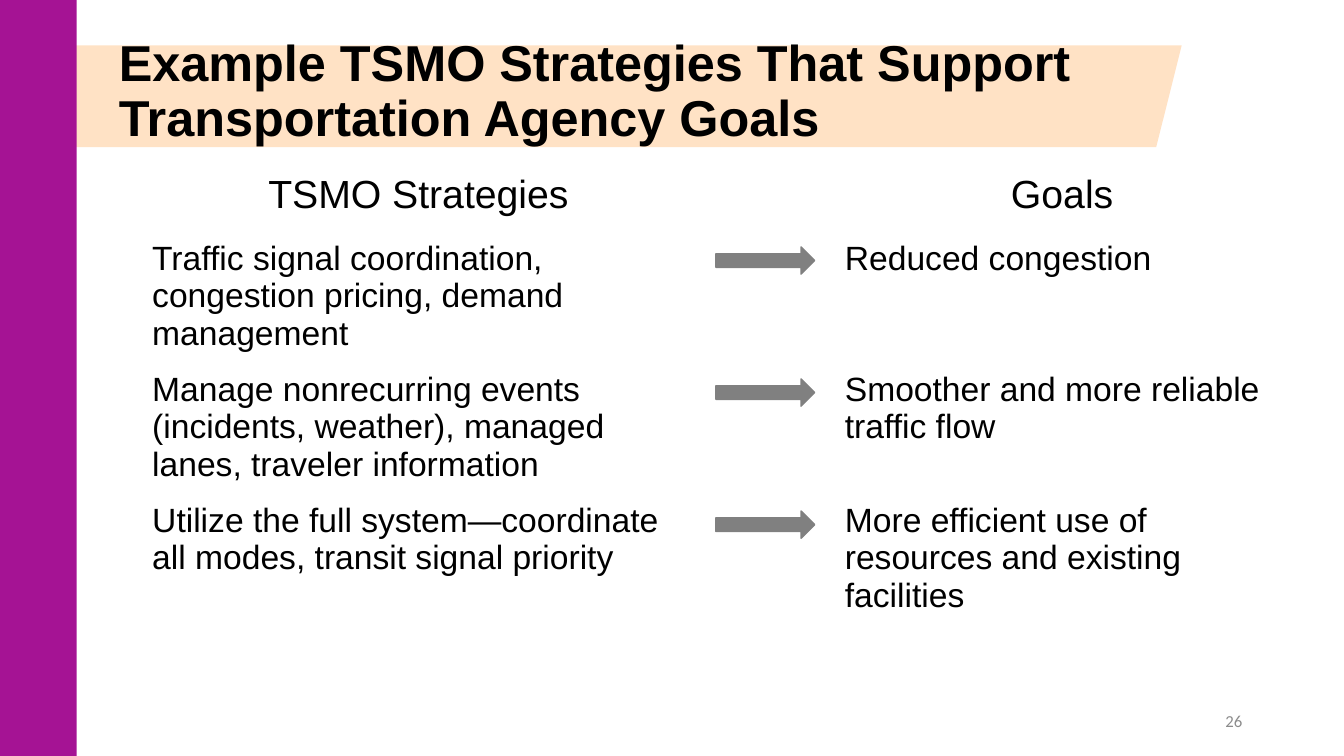
from dataclasses import dataclass

from pptx import Presentation
from pptx.dml.color import RGBColor
from pptx.enum.shapes import MSO_SHAPE
from pptx.enum.text import MSO_ANCHOR, PP_ALIGN
from pptx.util import Emu, Pt

SCALE = 9144  # EMU per px, 100 px to the inch


def px(n):
    return Emu(n * SCALE)


@dataclass(frozen=True)
class Theme:
    ink: str = "000000"
    bar: str = "A51394"
    band: str = "FFE2C5"
    arrow: str = "808080"
    muted: str = "8C8C8C"
    font: str = "Arial"
    small: str = "Calibri"
    title: int = 36
    head: int = 28
    body: int = 24
    note: int = 12


class Deck:
    def __init__(self, theme):
        self.theme = theme
        self.file = Presentation()
        self.file.slide_width, self.file.slide_height = px(1333), px(750)
        self.slide = self.file.slides.add_slide(self.file.slide_layouts[6])

    def shape(self, kind, box, color, line=False):
        item = self.slide.shapes.add_shape(kind, *map(px, box))
        item.shadow.inherit = False
        item.fill.solid()
        item.fill.fore_color.rgb = RGBColor.from_string(color)
        if line:
            item.line.color.rgb = RGBColor.from_string(color)
            item.line.width = Pt(1)
        else:
            item.line.fill.background()

    def add_run(self, para, text, size, color=None, font=None, bold=False):
        run = para.add_run()
        run.text = text
        run.font.name = font or self.theme.font
        run.font.size = Pt(size)
        run.font.bold = bold
        run.font.color.rgb = RGBColor.from_string(color or self.theme.ink)

    def text(self, box, text, size, anchor=MSO_ANCHOR.TOP,
             align=PP_ALIGN.LEFT, space=1.0, **style):
        frame = self.slide.shapes.add_textbox(*map(px, box)).text_frame
        frame.word_wrap = True
        frame.vertical_anchor = anchor
        para = frame.paragraphs[0]
        para.alignment = align
        para.line_spacing = space
        self.add_run(para, text, size, **style)

    def table(self, box, wide, high, rows):
        grid = self.slide.shapes.add_table(
            len(high), len(wide), *map(px, box)).table
        grid.first_row = grid.horz_banding = False
        for col, size in zip(grid.columns, wide):
            col.width = px(size)
        for row, size in zip(grid.rows, high):
            row.height = px(size)
        for r, row in enumerate(rows):
            for c, text in enumerate(row):
                cell = grid.cell(r, c)
                cell.fill.background()
                if not text:
                    continue
                para = cell.text_frame.paragraphs[0]
                if r == 0:
                    cell.vertical_anchor = MSO_ANCHOR.MIDDLE
                    para.alignment = PP_ALIGN.CENTER
                self.add_run(para, text,
                             self.theme.body if r else self.theme.head)


def main():
    theme = Theme()
    deck = Deck(theme)

    # Title band and side bar
    deck.shape(MSO_SHAPE.PARALLELOGRAM, (24, 45, 1148, 101), theme.band)
    deck.shape(MSO_SHAPE.RECTANGLE, (0, 0, 76, 750), theme.bar)
    deck.text((108, 33, 984, 103),
              "Example TSMO Strategies That Support "
              "Transportation Agency Goals",
              theme.title, space=0.9, bold=True)

    # Strategies and the goals they serve
    pairs = [
        ("TSMO Strategies", "Goals"),
        ("Traffic signal coordination, congestion pricing, "
         "demand management", "Reduced congestion"),
        ("Manage nonrecurring events (incidents, weather), managed lanes, "
         "traveler information", "Smoother and more reliable traffic flow"),
        ("Utilize the full system—coordinate all modes, "
         "transit signal priority",
         "More efficient use of resources and existing facilities"),
    ]
    deck.table((141, 153, 1138, 478), (548, 139, 451), (80, 110, 129, 159),
               [(plan, "", goal) for plan, goal in pairs])

    # One arrow for each pair below the heads
    for i in range(len(pairs) - 1):
        deck.shape(MSO_SHAPE.RIGHT_ARROW, (710, 245 + 131 * i, 98, 27),
                   theme.arrow, line=True)

    # Page number
    deck.text((942, 695, 300, 40), "26", theme.note, MSO_ANCHOR.MIDDLE,
              PP_ALIGN.RIGHT, color=theme.muted, font=theme.small)

    deck.file.save("out.pptx")


if __name__ == "__main__":
    main()
